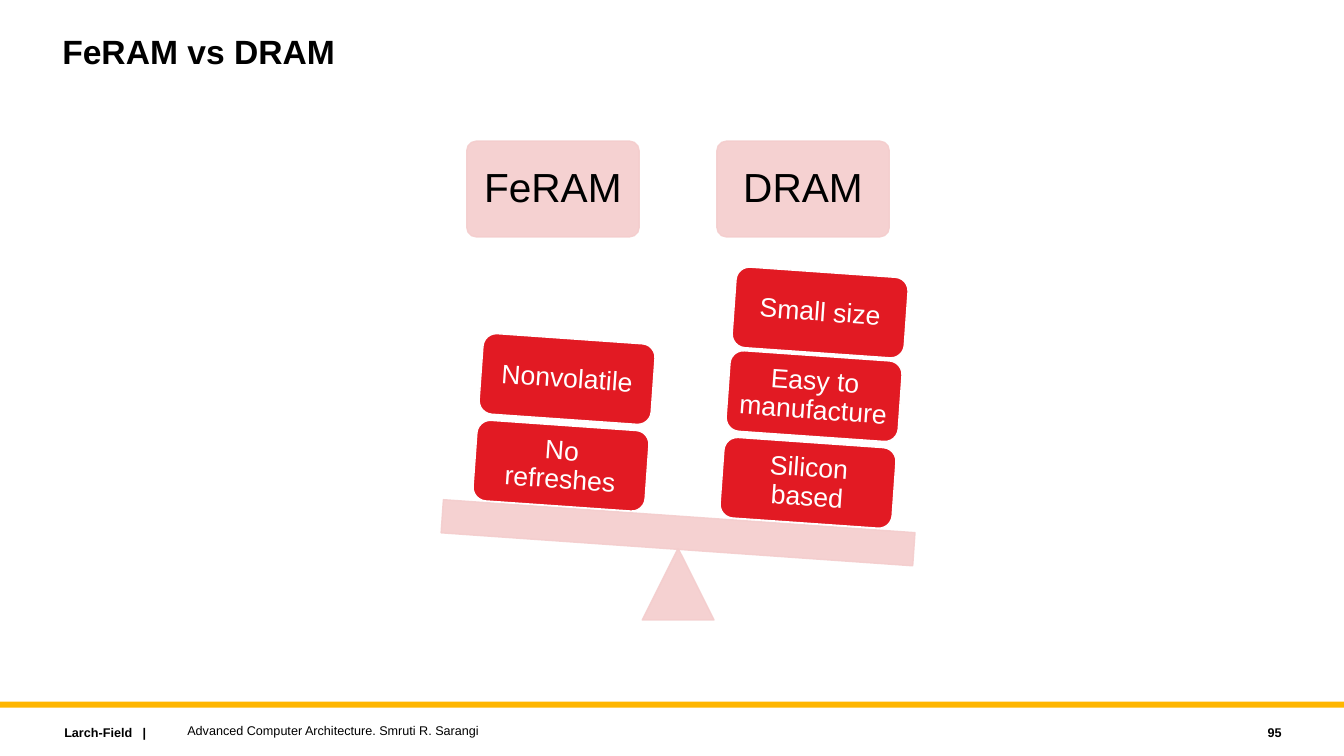
from dataclasses import dataclass

from lxml.etree import SubElement
from pptx import Presentation
from pptx.dml.color import RGBColor as RGB
from pptx.enum.shapes import MSO_SHAPE as SHAPE
from pptx.enum.text import MSO_ANCHOR as ANCHOR, PP_ALIGN as ALIGN
from pptx.oxml.ns import qn
from pptx.util import Inches, Pt


@dataclass(frozen=True)
class Theme:
    font: str = "Arial"
    ink: str = "000000"
    paper: str = "FFFFFF"
    pale: str = "F4CDCD"
    red: str = "E21A23"
    gold: str = "FFB600"
    title: int = 24
    heading: int = 29
    block: int = 19
    footer: int = 9
    pale_alpha: int = 90
    tilt: int = 4


class Deck:
    """Places elements by percent of the slide's width and height."""

    def __init__(self, theme):
        self.theme = theme
        self.prs = Presentation()
        self.prs.slide_width, self.prs.slide_height = Inches(13.33), Inches(7.5)
        self.s = self.prs.slides.add_slide(self.prs.slide_layouts[6])

    def box(self, x, y, w, h):
        col, row = self.prs.slide_width / 100, self.prs.slide_height / 100
        return [round(v) for v in (x * col, y * row, w * col, h * row)]

    def set_text(self, sp, text, size, color, bold=False, align=ALIGN.LEFT,
                 anchor=ANCHOR.TOP, spacing=1.0):
        tf = sp.text_frame
        tf.word_wrap, tf.vertical_anchor = True, anchor
        p = tf.paragraphs[0]
        p.text, p.alignment, p.line_spacing = text, align, spacing
        p.font.name, p.font.size, p.font.bold = self.theme.font, Pt(size), bold
        p.font.color.rgb = RGB.from_string(color)

    def label(self, at, text, size, **style):
        sp = self.s.shapes.add_textbox(*self.box(*at))
        self.set_text(sp, text, size, self.theme.ink, **style)

    def shape(self, kind, at, fill, line=None, tilt=0):
        sp = self.s.shapes.add_shape(kind, *self.box(*at))
        sp.shadow.inherit = False
        sp.rotation = tilt
        sp.fill.solid()
        sp.fill.fore_color.rgb = RGB.from_string(fill)
        if line:
            sp.line.color.rgb = RGB.from_string(line)
            sp.line.width = Pt(1)
        else:
            sp.line.fill.background()
        return sp

    def pale_shape(self, kind, at, tilt=0):
        t = self.theme
        sp = self.shape(kind, at, t.pale, t.pale, tilt)
        for color in sp.element.spPr.iter(qn("a:srgbClr")):
            SubElement(color, qn("a:alpha"), val=str(t.pale_alpha * 1000))
        return sp

    def centre(self, sp, text, size, color, inset):
        tf = sp.text_frame
        tf.margin_left = tf.margin_right = Inches(inset)
        tf.margin_top = tf.margin_bottom = Inches(inset)
        self.set_text(sp, text, size, color, align=ALIGN.CENTER,
                      anchor=ANCHOR.MIDDLE, spacing=0.9)

    def heading(self, at, text):
        sp = self.pale_shape(SHAPE.ROUNDED_RECTANGLE, at)
        sp.adjustments[0] = 0.1
        self.centre(sp, text, self.theme.heading, self.theme.ink, 0.12)

    def block(self, at, text):
        t = self.theme
        sp = self.shape(SHAPE.ROUNDED_RECTANGLE, at, t.red, t.paper, t.tilt)
        self.centre(sp, text, t.block, t.paper, 0.07)


def main():
    t = Theme()
    deck = Deck(t)

    # Title and footer
    deck.shape(SHAPE.RECTANGLE, (0, 92.8, 100, 0.8), t.gold)
    deck.label((4.05, 95.2, 17.03, 3.33), "Larch-Field   |", t.footer, bold=True)
    deck.label((3.9, 4, 75, 12), "FeRAM vs DRAM", t.title, bold=True, spacing=0.9)
    deck.label((13.2, 94.93, 60, 3.33),
               "Advanced Computer Architecture. Smruti R. Sarangi",
               t.footer, anchor=ANCHOR.MIDDLE)
    deck.label((85.6, 95.2, 10.5, 3.33), "95", t.footer, bold=True,
               align=ALIGN.RIGHT, anchor=ANCHOR.MIDDLE)

    # Seesaw: pivot and tilted plank
    deck.pale_shape(SHAPE.ISOSCELES_TRIANGLE, (47.79, 72.53, 5.33, 9.47))
    deck.pale_shape(SHAPE.RECTANGLE, (32.86, 68.27, 35.18, 4.4), t.tilt)

    # Each side: heading, then blocks stacked upward along the tilt
    width, lean = 12.83, 0.45
    lifts = (0, 11.47, 22.53)
    sides = (
        ("FeRAM", 34.73, (35.33, 56.27), ("No refreshes", "Nonvolatile")),
        ("DRAM", 53.34, (53.71, 58.53),
         ("Silicon based", "Easy to manufacture", "Small size")),
    )
    for name, left, (x, y), blocks in sides:
        deck.heading((left, 18.67, width, 12.67), name)
        for level, (text, lift) in enumerate(zip(blocks, lifts)):
            deck.block((x + level * lean, y - lift, width, 10.67), text)

    deck.prs.save("out.pptx")


if __name__ == "__main__":
    main()
